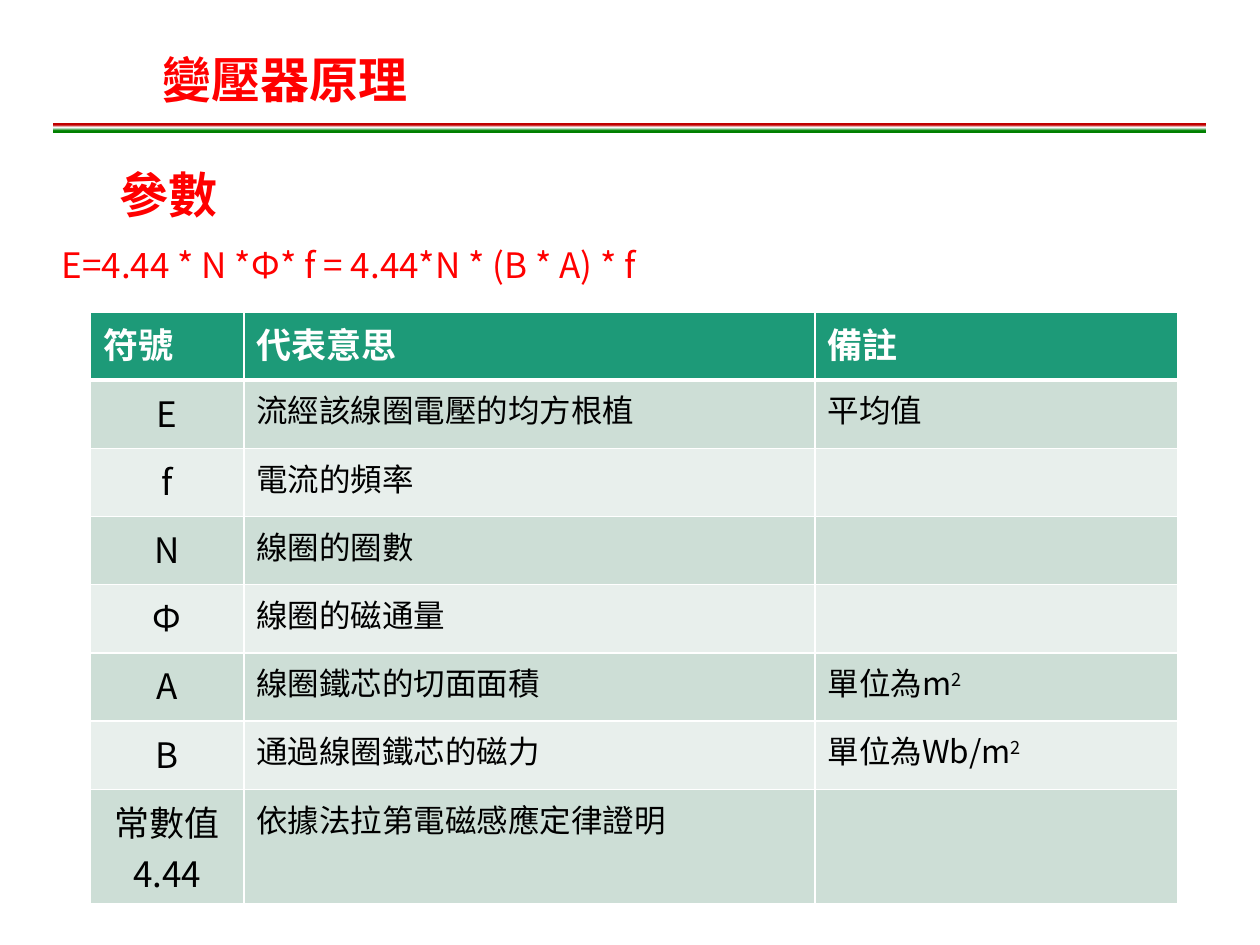
from dataclasses import dataclass

from lxml.etree import SubElement
from pptx import Presentation
from pptx.dml.color import RGBColor as Rgb
from pptx.enum.shapes import MSO_SHAPE as Shape
from pptx.enum.text import MSO_ANCHOR as Anchor, MSO_AUTO_SIZE as AutoSize, PP_ALIGN as Align
from pptx.oxml.ns import qn
from pptx.util import Pt

COLORS = {
    "red": "FF0000",
    "white": "FFFFFF",
    "black": "000000",
    "header": "1D9A78",
    "dark_band": "CDDED6",
    "light_band": "E8EFEC",
    "rule_green": "008000",
    "rule_mint": "E0EFE9",
    "rule_red": "C00000",
}
FONT = "Noto Sans CJK SC"
PHI_FONT = "Noto Sans CJK TC"


@dataclass
class Frame:
    left: float
    top: float
    width: float
    height: float

    def lengths(self):
        return [Pt(value) for value in (self.left, self.top, self.width, self.height)]


@dataclass
class Parameter:
    symbol: str
    meaning: str
    note: str = ""
    power: str = ""


TITLE = Frame(85.68, 30.24, 353.52, 33.84)
SUBTITLE = Frame(61.2, 94.32, 342, 43.92)
FORMULA = Frame(28.08, 138.24, 648, 115.92)
RULE = Frame(30.24, 70.56, 658.8, 5.76)
TABLE = Frame(51.84, 178.2, 621.36, 331.92)
COLUMN_WIDTHS = (87.5, 326.5, 207.36)
ROW_HEIGHT, LAST_ROW_HEIGHT = 39, 58.5
RULE_STOPS = ((28, "rule_green"), (55, "rule_mint"), (62, "white"), (85, "rule_red"))
HEADINGS = ("符號", "代表意思", "備註")
PARAMETERS = (
    Parameter("E", "流經該線圈電壓的均方根植", "平均值"),
    Parameter("f", "電流的頻率"),
    Parameter("N", "線圈的圈數"),
    Parameter("Ф", "線圈的磁通量"),
    Parameter("A", "線圈鐵芯的切面面積", "單位為m", "2"),
    Parameter("B", "通過線圈鐵芯的磁力", "單位為Wb/m", "2"),
    Parameter("常數值4.44", "依據法拉第電磁感應定律證明"),
)


def write(para, text: str, *, size=18, color="black", bold=False, font=FONT,
          raised=False, align=Align.LEFT) -> None:
    para.alignment = align
    span = para.add_run()
    span.text = text
    span.font.size = Pt(size)
    span.font.bold = bold
    span.font.color.rgb = Rgb.from_string(COLORS[color])
    span.font.name = font
    props = span.font._element
    SubElement(props, qn("a:ea"), typeface=font)
    if raised:
        props.set("baseline", "30000")


def prepare(box, frame: Frame, anchor=Anchor.TOP):
    box.left, box.top, box.width, box.height = frame.lengths()
    text_frame = box.text_frame
    text_frame.word_wrap = True
    text_frame.auto_size = AutoSize.NONE
    text_frame.vertical_anchor = anchor
    para = text_frame.paragraphs[0]
    props = para._p.get_or_add_pPr()
    props.set("marL", "0")
    props.set("indent", "0")
    SubElement(props, qn("a:buNone"))
    para.line_spacing = 0.9
    para.space_before = Pt(0)
    return para


def add_rule(page) -> None:
    rule = page.shapes.add_shape(Shape.RECTANGLE, *RULE.lengths())
    rule.shadow.inherit = False
    rule.line.fill.background()
    rule.fill.gradient()
    gradient = rule._element.spPr.find(qn("a:gradFill"))
    stops = gradient.find(qn("a:gsLst"))
    for stop in list(stops):
        stops.remove(stop)
    for percent, color in RULE_STOPS:
        stop = SubElement(stops, qn("a:gs"), pos=str(percent * 1000))
        SubElement(stop, qn("a:srgbClr"), val=COLORS[color])
    gradient.find(qn("a:lin")).set("ang", str(270 * 60000))


def style_cell(cell, fill: str, top: float = 1, bottom: float = 1) -> None:
    props = cell._tc.get_or_add_tcPr()
    for side, width in (("L", 1), ("R", 1), ("T", top), ("B", bottom)):
        line = SubElement(props, qn(f"a:ln{side}"), w=str(Pt(width)))
        solid = SubElement(line, qn("a:solidFill"))
        SubElement(solid, qn("a:srgbClr"), val=COLORS["white"])
    cell.fill.solid()
    cell.fill.fore_color.rgb = Rgb.from_string(COLORS[fill])


def add_parameter_table(page) -> None:
    table = page.shapes.add_table(len(PARAMETERS) + 1, len(HEADINGS), *TABLE.lengths()).table
    for column, width in zip(table.columns, COLUMN_WIDTHS):
        column.width = Pt(width)
    for row in table.rows:
        row.height = Pt(ROW_HEIGHT)
    table.rows[len(PARAMETERS)].height = Pt(LAST_ROW_HEIGHT)

    for cell, heading in zip(table.rows[0].cells, HEADINGS):
        style_cell(cell, "header", bottom=3)
        write(cell.text_frame.paragraphs[0], heading, size=20, color="white", bold=True)

    for index, parameter in enumerate(PARAMETERS, start=1):
        cells = list(table.rows[index].cells)
        for cell in cells:
            style_cell(cell, "dark_band" if index % 2 else "light_band", top=3 if index == 1 else 1)
        symbol, meaning, note = (cell.text_frame.paragraphs[0] for cell in cells)
        write(symbol, parameter.symbol, size=20, align=Align.CENTER)
        write(meaning, parameter.meaning)
        if parameter.note:
            write(note, parameter.note)
        if parameter.power:
            write(note, parameter.power, raised=True)


def main() -> None:
    deck = Presentation()
    deck.slide_width, deck.slide_height = Pt(720), Pt(540)
    page = deck.slides.add_slide(deck.slide_layouts[1])
    add_rule(page)

    title = prepare(page.shapes.title, TITLE, Anchor.MIDDLE)
    write(title, "變壓器原理", size=28, color="red", bold=True)
    subtitle = prepare(page.placeholders[1], SUBTITLE)
    write(subtitle, "參數", size=28, color="red", bold=True)

    formula = prepare(page.shapes.add_textbox(*FORMULA.lengths()), FORMULA)
    for text, font in (("E=4.44 * N *", FONT), ("Ф", PHI_FONT), ("* f = 4.44*N * (B * A) * f", FONT)):
        write(formula, text, size=20, color="red", font=font)

    add_parameter_table(page)
    deck.save("out.pptx")


if __name__ == "__main__":
    main()
